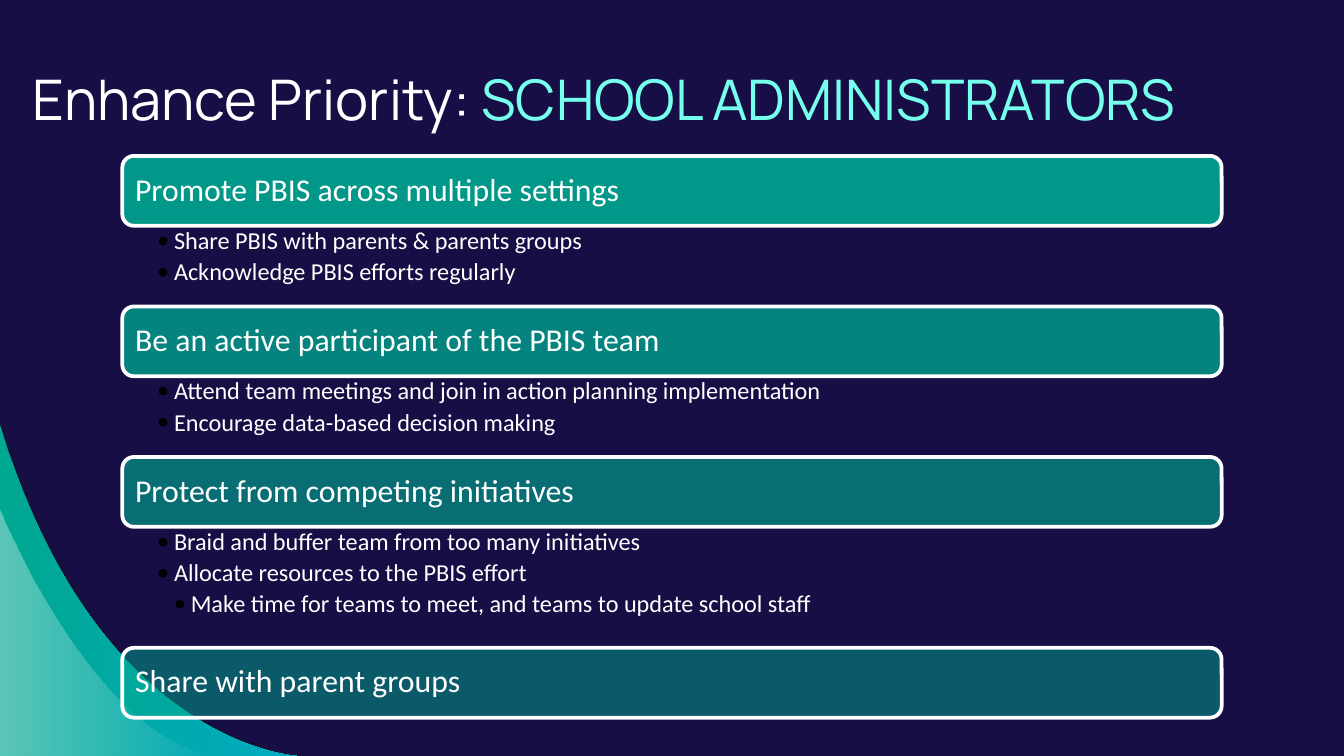
"""Build the slide on how school administrators enhance the priority of PBIS."""
from lxml import etree
from pptx import Presentation
from pptx.dml.color import RGBColor
from pptx.enum import shapes, text
from pptx.oxml import ns
from pptx.util import Inches, Pt

NAVY = RGBColor(0x16, 0x0E, 0x44)
SHADE = RGBColor(0x12, 0x10, 0x2F)
TEAL = RGBColor(0x00, 0xA7, 0x91)
CYAN = RGBColor(0x00, 0xAC, 0xC2)
AQUA = RGBColor(0x76, 0xFF, 0xED)
WHITE = RGBColor(0xFF, 0xFF, 0xFF)

WIDTH = 10
HEIGHT = WIDTH * 9 / 16
LEFT, BAR_WIDTH, BAR_HEIGHT = 0.91, 8.18, 0.52
LINE_HEIGHT = 0.3
CURVE_STEPS = 40

SECTIONS = [
    ("Promote PBIS across multiple settings", 90,
     [(1, "Share PBIS with parents & parents groups"),
      (1, "Acknowledge PBIS efforts regularly")]),
    ("Be an active participant of the PBIS team", 77,
     [(1, "Attend team meetings and join in action planning implementation"),
      (1, "Encourage data-based decision making")]),
    ("Protect from competing initiatives", 63,
     [(1, "Braid and buffer team from too many initiatives"),
      (1, "Allocate resources to the PBIS effort"),
      (2, "Make time for teams to meet, and teams to update school staff")]),
    ("Share with parent groups", 50, []),
]

SWOOSHES = [
    ([(0, 3.1), (0.73, 5.54), (2.27, HEIGHT), (2.27, HEIGHT)], [SHADE], [54]),
    ([(0, 3.16), (0.72, 5.55), (2.21, HEIGHT), (2.21, HEIGHT)], [TEAL, CYAN], [100, 100]),
    ([(0, 3.8), (0, 3.8), (0.69, 5.51), (1.62, HEIGHT)], [WHITE, WHITE], [36, 0]),
]


def write(paragraph, wording, size, font="Calibri", color=WHITE, spacing=0.9, after=0):
    paragraph.alignment = text.PP_ALIGN.LEFT
    paragraph.line_spacing = spacing
    paragraph.space_after = Pt(after)
    run = paragraph.add_run()
    run.text = wording
    run.font.size, run.font.name = Pt(size), font
    run.font.color.rgb = color


def fade(shape, opacities):
    for color, opacity in zip(shape.element.iter(ns.qn("a:srgbClr")), opacities):
        etree.SubElement(color, ns.qn("a:alpha"), val=str(opacity * 1000))


deck = Presentation()
deck.slide_width, deck.slide_height = Inches(WIDTH), Inches(HEIGHT)
slide = deck.slides.add_slide(deck.slide_layouts[5])
slide.background.fill.solid()
slide.background.fill.fore_color.rgb = NAVY

for controls, colors, opacities in SWOOSHES:
    curve = []
    for step in range(CURVE_STEPS + 1):
        t = step / CURVE_STEPS
        weights = ((1 - t) ** 3, 3 * t * (1 - t) ** 2, 3 * t ** 2 * (1 - t), t ** 3)
        curve.append([Inches(sum(w * point[axis] for w, point in zip(weights, controls)))
                      for axis in (0, 1)])
    outline = slide.shapes.build_freeform(*curve[0])
    outline.add_line_segments(curve[1:] + [(0, Inches(HEIGHT))], close=True)
    swoosh = outline.convert_to_shape()
    swoosh.shadow.inherit = False
    swoosh.line.fill.background()
    if len(colors) == 1:
        swoosh.fill.solid()
        swoosh.fill.fore_color.rgb = colors[0]
    else:
        swoosh.fill.gradient()
        swoosh.fill.gradient_angle = 0
        for stop, color in zip(swoosh.fill.gradient_stops, colors):
            stop.color.rgb = color
    fade(swoosh, opacities)

title = slide.shapes.title
title.left, title.top = Inches(0.14), Inches(0.38)
title.width, title.height = Inches(9.71), Inches(0.69)
heading = title.text_frame
heading.vertical_anchor = text.MSO_ANCHOR.TOP
heading.auto_size = text.MSO_AUTO_SIZE.NONE
heading.margin_left = heading.margin_right = Inches(0.1)
heading.margin_top = heading.margin_bottom = Inches(0.1)
for wording, color in (("Enhance Priority: ", WHITE), ("SCHOOL ADMINISTRATORS", AQUA)):
    write(heading.paragraphs[0], wording, 30, font="Manrope", color=color, spacing=1.0)

top = 1.16
for section, opacity, actions in SECTIONS:
    bar = slide.shapes.add_shape(shapes.MSO_SHAPE.ROUNDED_RECTANGLE, Inches(LEFT),
                                 Inches(top), Inches(BAR_WIDTH), Inches(BAR_HEIGHT))
    bar.shadow.inherit = False
    bar.fill.solid()
    bar.fill.fore_color.rgb = TEAL
    fade(bar, [opacity])
    bar.line.color.rgb, bar.line.width = WHITE, Pt(2)
    label = bar.text_frame
    label.vertical_anchor = text.MSO_ANCHOR.MIDDLE
    label.margin_left = label.margin_right = Inches(0.07)
    write(label.paragraphs[0], section, 17)
    top += BAR_HEIGHT
    if not actions:
        continue

    details = slide.shapes.add_textbox(Inches(LEFT), Inches(top), Inches(BAR_WIDTH),
                                       Inches(LINE_HEIGHT * len(actions))).text_frame
    details.word_wrap = True
    details.margin_left, details.margin_right = Inches(0.26), Inches(0.13)
    details.margin_top = details.margin_bottom = Inches(0.02)
    for number, (level, action) in enumerate(actions):
        item = details.add_paragraph() if number else details.paragraphs[0]
        item.level = level
        write(item, action, 13, after=2.6)
        layout = item._p.get_or_add_pPr()
        layout.set("marL", str(Inches(0.125 * level)))
        layout.set("indent", str(Inches(-0.125)))
        bullet_color = etree.SubElement(layout, ns.qn("a:buClr"))
        etree.SubElement(bullet_color, ns.qn("a:srgbClr"), val="000000")
        etree.SubElement(layout, ns.qn("a:buFont"), typeface="Calibri")
        etree.SubElement(layout, ns.qn("a:buChar"), char="•")
        item.font.size = Pt(13)
    top += LINE_HEIGHT * len(actions)

deck.save("out.pptx")
